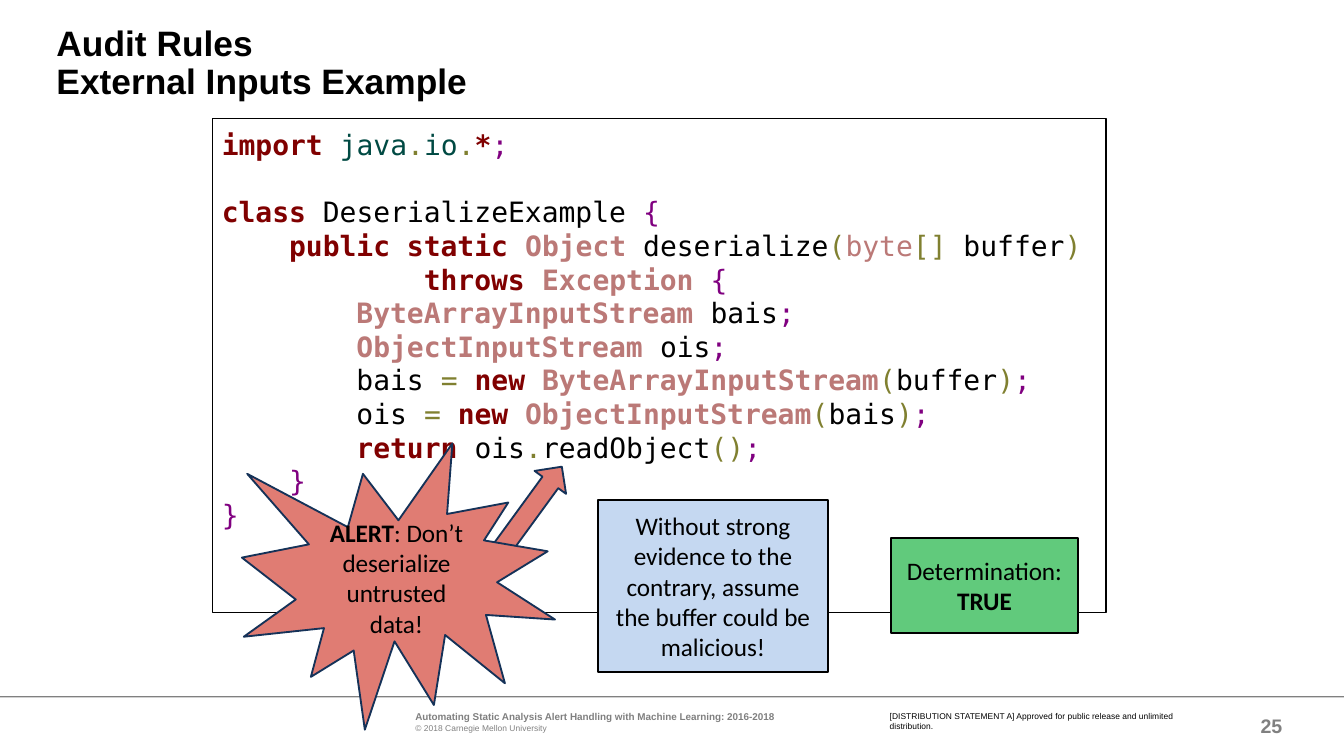
from pptx import Presentation
from pptx.dml.color import RGBColor
from pptx.enum.shapes import MSO_SHAPE
from pptx.enum.text import MSO_ANCHOR, PP_ALIGN
from pptx.util import Inches, Pt

RECTANGLE = MSO_SHAPE.RECTANGLE
LEFT_ARROW = MSO_SHAPE.LEFT_ARROW
EXPLOSION = MSO_SHAPE.EXPLOSION1
TOP, MIDDLE = MSO_ANCHOR.TOP, MSO_ANCHOR.MIDDLE
LEFT, CENTER, RIGHT = PP_ALIGN.LEFT, PP_ALIGN.CENTER, PP_ALIGN.RIGHT

BLACK, GRAY, NAVY, CORAL = "000000", "808080", "153258", "E07C73"

SYNTAX = {
    "keyword": ("800000", True),
    "class": ("BB7977", True),
    "type": ("BB7977", False),
    "package": ("004A43", False),
    "operator": ("808030", False),
    "mark": ("800080", False),
    "name": (BLACK, False),
}

CODE = [
    [("import", "keyword"), (" java", "package"), (".", "operator"),
     ("io", "package"), (".", "operator"), ("*", "keyword"), (";", "mark")],
    [],
    [("class", "keyword"), (" DeserializeExample ", "name"), ("{", "mark")],
    [("    public static ", "keyword"), ("Object", "class"),
     (" deserialize", "name"), ("(", "operator"), ("byte", "type"),
     ("[]", "operator"), (" buffer", "name"), (")", "operator")],
    [("            throws ", "keyword"), ("Exception ", "class"), ("{", "mark")],
    [("        ByteArrayInputStream", "class"), (" bais", "name"), (";", "mark")],
    [("        ObjectInputStream", "class"), (" ois", "name"), (";", "mark")],
    [("        bais ", "name"), ("= ", "operator"), ("new ", "keyword"),
     ("ByteArrayInputStream", "class"), ("(", "operator"),
     ("buffer", "name"), (")", "operator"), (";", "mark")],
    [("        ois ", "name"), ("= ", "operator"), ("new ", "keyword"),
     ("ObjectInputStream", "class"), ("(", "operator"),
     ("bais", "name"), (")", "operator"), (";", "mark")],
    [("        return", "keyword"), (" ois", "name"), (".", "operator"),
     ("readObject", "name"), ("()", "operator"), (";", "mark")],
    [("    }", "mark")],
    [("}", "mark")],
]


def rgb(color):
    return RGBColor.from_string(color)


def style_font(font, size, name, color=BLACK, bold=False):
    font.size, font.name, font.bold = Pt(size), name, bold
    font.color.rgb = rgb(color)


def add_run(paragraph, text, size, name, color=BLACK, bold=False):
    run = paragraph.add_run()
    run.text = text
    style_font(run.font, size, name, color, bold)


def prepare_frame(frame, insets, anchor=TOP):
    frame.word_wrap = True
    frame.vertical_anchor = anchor
    (frame.margin_left, frame.margin_top,
     frame.margin_right, frame.margin_bottom) = map(Inches, insets)


def add_paragraphs(frame, count, align):
    for _ in range(count - 1):
        frame.add_paragraph()
    for paragraph in frame.paragraphs:
        paragraph.alignment = align
    return frame.paragraphs


def add_figure(slide, kind, box, fill=None, line=None, width=1):
    figure = slide.shapes.add_shape(kind, *map(Inches, box))
    figure.shadow.inherit = False
    if fill:
        figure.fill.solid()
        figure.fill.fore_color.rgb = rgb(fill)
    else:
        figure.fill.background()
    if line:
        figure.line.color.rgb = rgb(line)
        figure.line.width = Pt(width)
    else:
        figure.line.fill.background()
    return figure


def add_callout(slide, kind, box, fill, line, lines):
    frame = add_figure(slide, kind, box, fill, line).text_frame
    prepare_frame(frame, (0.1, 0.05, 0.1, 0.05), MIDDLE)
    for paragraph, runs in zip(add_paragraphs(frame, len(lines), CENTER), lines):
        for text, bold in runs:
            add_run(paragraph, text, 13.5, "Calibri", bold=bold)


def add_footer(slide, box, lines, align=LEFT, anchor=TOP):
    frame = slide.shapes.add_textbox(*map(Inches, box)).text_frame
    prepare_frame(frame, (0, 0, 0, 0), anchor)
    for paragraph, line in zip(add_paragraphs(frame, len(lines), align), lines):
        text, size, color, bold = line
        add_run(paragraph, text, size, "Arial", color, bold)


def add_title(slide, lines):
    title = slide.shapes.title
    title.left, title.top, title.width, title.height = map(
        Inches, (0.42, 0.19, 8.33, 0.59))
    prepare_frame(title.text_frame, (0, 0, 0, 0))
    paragraph = title.text_frame.paragraphs[0]
    paragraph.alignment = LEFT
    paragraph.line_spacing = 0.9
    for index, line in enumerate(lines):
        if index:
            paragraph.add_line_break()
        add_run(paragraph, line, 18.9, "Arial", bold=True)


def add_code(slide, box):
    frame = add_figure(slide, RECTANGLE, box, line=BLACK, width=0.75).text_frame
    prepare_frame(frame, (0.07, 0.07, 0, 0.07))
    for paragraph, tokens in zip(add_paragraphs(frame, len(CODE), LEFT), CODE):
        paragraph.line_spacing = Pt(18)
        style_font(paragraph.font, 15, "DejaVu Sans Mono")
        for text, token in tokens:
            add_run(paragraph, text, 15, "DejaVu Sans Mono", *SYNTAX[token])


def main():
    deck = Presentation()
    deck.slide_width = Inches(10)
    deck.slide_height = deck.slide_width * 9 // 16
    slide = deck.slides.add_slide(deck.slide_layouts[5])

    add_footer(slide, (9.1, 5.25, 0.44, 0.3), [("25", 10.5, GRAY, True)],
               RIGHT, MIDDLE)
    add_footer(slide, (3.09, 5.29, 3.37, 0.16), [
        ("Automating Static Analysis Alert Handling with Machine Learning: "
         "2016-2018", 5.3, GRAY, True),
        ("© 2018 Carnegie Mellon University", 4.5, GRAY, False)])
    add_footer(slide, (6.62, 5.29, 2.29, 0.15), [
        ("[DISTRIBUTION STATEMENT A] Approved for public release and "
         "unlimited distribution.", 4.5, BLACK, False)])
    add_figure(slide, RECTANGLE, (0, 5.18, 10, 0.01), GRAY)

    add_title(slide, ["Audit Rules", "External Inputs Example"])
    add_code(slide, (1.58, 0.88, 6.65, 3.68))

    pointer = add_figure(slide, LEFT_ARROW, (3.33, 3.76, 1.07, 0.29), CORAL, NAVY)
    pointer.rotation = 126.1
    add_callout(slide, EXPLOSION, (1.8, 3.3, 2.33, 2.13), CORAL, NAVY,
                [[("ALERT", True), (": Don’t deserialize untrusted data!", False)]])
    add_callout(slide, RECTANGLE, (4.45, 3.72, 1.71, 1.28), "C5D8F1", BLACK,
                [[("Without strong evidence to the contrary, assume the buffer "
                   "could be malicious!", False)]])
    add_callout(slide, RECTANGLE, (6.63, 4, 1.39, 0.71), "61CA7C", BLACK,
                [[("Determination:", False)], [("TRUE", True)]])

    deck.save("out.pptx")


if __name__ == "__main__":
    main()
